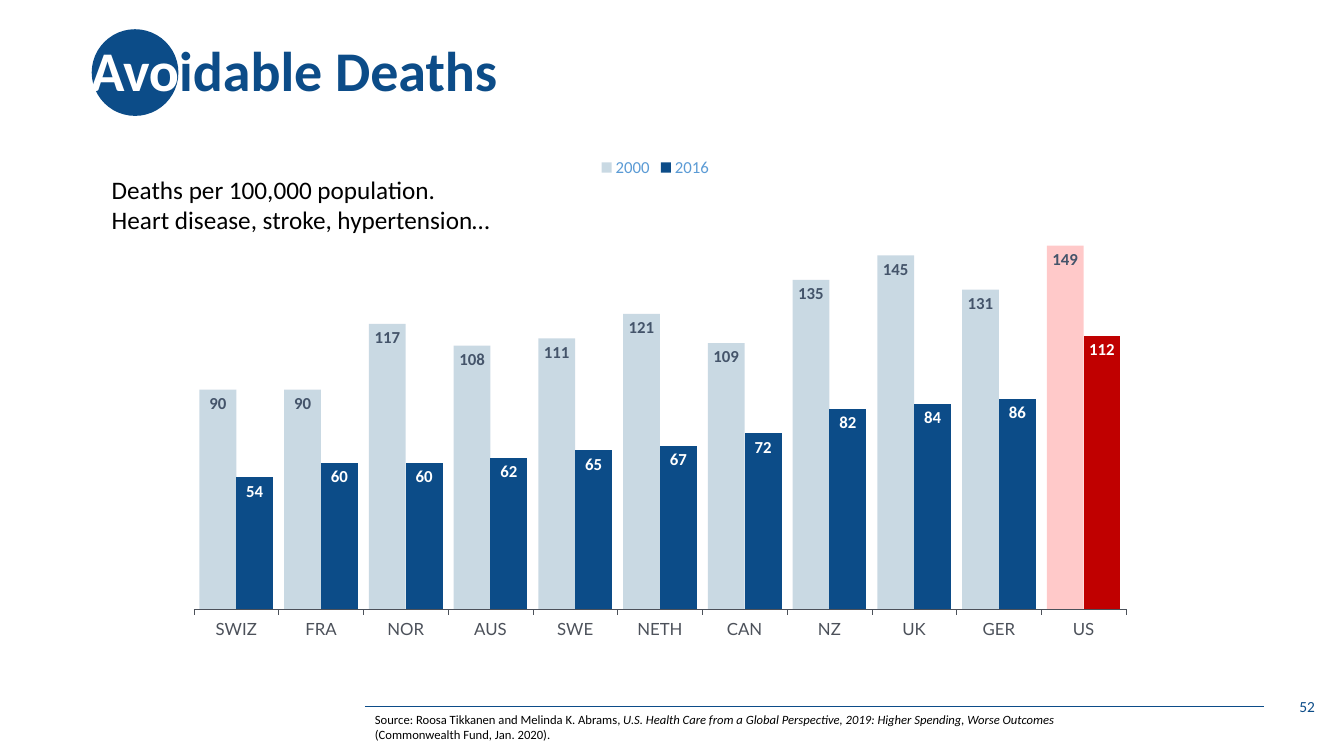
from dataclasses import dataclass

from lxml import etree
from pptx import Presentation
from pptx.chart.data import CategoryChartData
from pptx.dml.color import RGBColor
from pptx.enum.chart import XL_CHART_TYPE, XL_LABEL_POSITION, XL_LEGEND_POSITION, XL_TICK_MARK
from pptx.enum.shapes import MSO_CONNECTOR, MSO_SHAPE
from pptx.enum.text import MSO_ANCHOR, PP_ALIGN
from pptx.oxml.ns import qn
from pptx.util import Inches, Pt

COLUMNS = XL_CHART_TYPE.COLUMN_CLUSTERED
INSIDE_END = XL_LABEL_POSITION.INSIDE_END
LEGEND_TOP = XL_LEGEND_POSITION.TOP
TICK_OUTSIDE = XL_TICK_MARK.OUTSIDE
TICK_NONE = XL_TICK_MARK.NONE
STRAIGHT = MSO_CONNECTOR.STRAIGHT
OVAL = MSO_SHAPE.OVAL
TOP = MSO_ANCHOR.TOP
MIDDLE = MSO_ANCHOR.MIDDLE
LEFT = PP_ALIGN.LEFT
RIGHT = PP_ALIGN.RIGHT


@dataclass(frozen=True)
class Theme:
    navy: str = "0C4C88"
    pale_blue: str = "044C7F"
    pale_red: str = "FF0000"
    red: str = "C00000"
    white: str = "FFFFFF"
    black: str = "000000"
    slate: str = "44546A"
    gray: str = "4C515A"
    sky: str = "5B9BD5"
    pale_opacity: int = 21000
    font: str = "Calibri"
    chart_font: str = "Lato"
    title_size: int = 40
    body_size: int = 18
    label_size: int = 12
    page_size: int = 11
    chart_size: int = 10
    source_size: int = 9


def set_font(font, size, color, **values):
    for name, value in {"size": Pt(size), **values}.items():
        setattr(font, name, value)
    font.color.rgb = RGBColor.from_string(color)


def set_fill(target, color):
    target.fill.solid()
    target.fill.fore_color.rgb = RGBColor.from_string(color)


class SlideBuilder:
    def __init__(self, slide, theme):
        self.slide = slide
        self.theme = theme

    def rule(self, start, end):
        line = self.slide.shapes.add_connector(STRAIGHT, *map(Inches, start + end))
        line.line.color.rgb = RGBColor.from_string(self.theme.navy)
        line.line.width = Pt(0.5)
        etree.SubElement(line.element.spPr, qn("a:effectLst"))

    def circle(self, box):
        circle = self.slide.shapes.add_shape(OVAL, *map(Inches, box))
        circle.shadow.inherit = False
        set_fill(circle, self.theme.navy)
        circle.line.fill.background()

    def text(self, box, paragraphs, size, anchor=TOP, wrap=True, **paragraph_format):
        frame = self.slide.shapes.add_textbox(*map(Inches, box)).text_frame
        for name, value in {"word_wrap": wrap, "vertical_anchor": anchor}.items():
            setattr(frame, name, value)
        for index, runs in enumerate(paragraphs):
            paragraph = frame.add_paragraph() if index else frame.paragraphs[0]
            for name, value in paragraph_format.items():
                setattr(paragraph, name, value)
            for content, color, values in runs:
                run = paragraph.add_run()
                run.text = content
                set_font(run.font, size, color, name=self.theme.font, **values)

    def column_chart(self, box, categories, series_styles, plot_layout):
        theme = self.theme
        data = CategoryChartData(number_format="#,##0")
        data.categories = categories
        for name, values, *_ in series_styles:
            data.add_series(name, values)
        chart = self.slide.shapes.add_chart(COLUMNS, *map(Inches, box), data).chart
        set_font(chart.font, theme.chart_size, theme.sky, name=theme.chart_font)

        for name, value in {"has_title": False, "has_legend": True}.items():
            setattr(chart, name, value)
        for name, value in {"position": LEGEND_TOP, "include_in_layout": False}.items():
            setattr(chart.legend, name, value)
        set_font(chart.legend.font, theme.label_size, theme.sky, name=theme.font)

        self.style_axes(chart)
        plot = chart.plots[0]
        for name, value in {"gap_width": 30, "overlap": 0, "vary_by_categories": False}.items():
            setattr(plot, name, value)
        for series, style in zip(plot.series, series_styles):
            self.style_series(series, *style[2:])
        self.soften_pale_colors(chart)
        self.place_plot(chart, plot_layout)

    def style_axes(self, chart):
        theme = self.theme
        value_format = {
            "visible": False,
            "has_major_gridlines": False,
            "minimum_scale": 0,
            "maximum_scale": 160,
        }
        for name, value in value_format.items():
            setattr(chart.value_axis, name, value)
        axis = chart.category_axis
        category_format = {
            "major_tick_mark": TICK_OUTSIDE,
            "minor_tick_mark": TICK_NONE,
            "has_major_gridlines": False,
        }
        for name, value in category_format.items():
            setattr(axis, name, value)
        set_font(axis.tick_labels.font, theme.label_size, theme.gray, name=theme.chart_font)
        axis.format.line.color.rgb = RGBColor.from_string(theme.gray)
        axis.format.line.width = Pt(0.3)

    def style_series(self, series, color, highlight, label_color):
        series.invert_if_negative = False
        set_fill(series.format, color)
        last_point = series.points[len(series.values) - 1]
        set_fill(last_point.format, highlight)
        labels = series.data_labels
        label_format = {
            "show_value": True,
            "position": INSIDE_END,
            "number_format": "#,##0",
            "number_format_is_linked": False,
        }
        for name, value in label_format.items():
            setattr(labels, name, value)
        set_font(labels.font, self.theme.label_size, label_color, name=self.theme.font, bold=True)

    def soften_pale_colors(self, chart):
        for color in chart.element.iter(qn("a:srgbClr")):
            if color.get("val") in (self.theme.pale_blue, self.theme.pale_red):
                etree.SubElement(color, qn("a:alpha"), val=str(self.theme.pale_opacity))

    def place_plot(self, chart, plot_layout):
        plot_area = chart.element.find(".//" + qn("c:plotArea"))
        for layout in plot_area.findall(qn("c:layout")):
            plot_area.remove(layout)
        layout = etree.Element(qn("c:layout"))
        manual = etree.SubElement(layout, qn("c:manualLayout"))
        settings = {"layoutTarget": "inner", "xMode": "edge", "yMode": "edge", **plot_layout}
        for name, value in settings.items():
            etree.SubElement(manual, qn(f"c:{name}"), val=str(value))
        plot_area.insert(0, layout)


def main():
    theme = Theme()
    presentation = Presentation()
    presentation.slide_width = Inches(13.33)
    presentation.slide_height = Inches(7.5)
    slide = presentation.slides.add_slide(presentation.slide_layouts[6])
    builder = SlideBuilder(slide, theme)

    builder.rule((3.62, 7.01), (12.54, 7.01))
    builder.circle((0.91, 0.29, 0.86, 0.86))
    bold = {"bold": True}
    title = [("Avo", theme.white, bold), ("idable Deaths", theme.navy, bold)]
    builder.text((0.8, 0, 11.5, 1.45), [title], theme.title_size, MIDDLE, line_spacing=0.9)
    page_number = [("52", theme.navy, {})]
    builder.text((10.14, 6.81, 3, 0.4), [page_number], theme.page_size, MIDDLE, alignment=RIGHT)

    countries = ["SWIZ", "FRA", "NOR", "AUS", "SWE", "NETH", "CAN", "NZ", "UK", "GER", "US"]
    deaths_2000 = [90, 90, 117, 108, 111, 121, 109, 135, 145, 131, 149]
    deaths_2016 = [54, 60, 60, 62, 65, 67, 72, 82, 84, 86, 112]
    series_styles = [
        ("2000", deaths_2000, theme.pale_blue, theme.pale_red, theme.slate),
        ("2016", deaths_2016, theme.navy, theme.red, theme.white),
    ]
    plot_layout = {"x": 0.01, "y": 0.14, "w": 0.99, "h": 0.75}
    builder.column_chart((1.83, 1.45, 9.34, 5.16), countries, series_styles, plot_layout)

    report = "U.S. Health Care from a Global Perspective, 2019: Higher Spending, Worse Outcomes "
    source = [
        ("Source: Roosa Tikkanen and Melinda K. Abrams, ", theme.black, {}),
        (report, theme.black, {"italic": True}),
        ("(Commonwealth Fund, Jan. 2020).", theme.black, {}),
    ]
    builder.text((3.62, 7.01, 7.55, 0.4), [source], theme.source_size, alignment=LEFT)
    subtitle = ["Deaths per 100,000 population.", "Heart disease, stroke, hypertension…"]
    lines = [[(line, theme.black, {})] for line in subtitle]
    builder.text((1.01, 1.68, 4.01, 0.71), lines, theme.body_size, wrap=False, alignment=LEFT)

    presentation.save("out.pptx")


if __name__ == "__main__":
    main()
